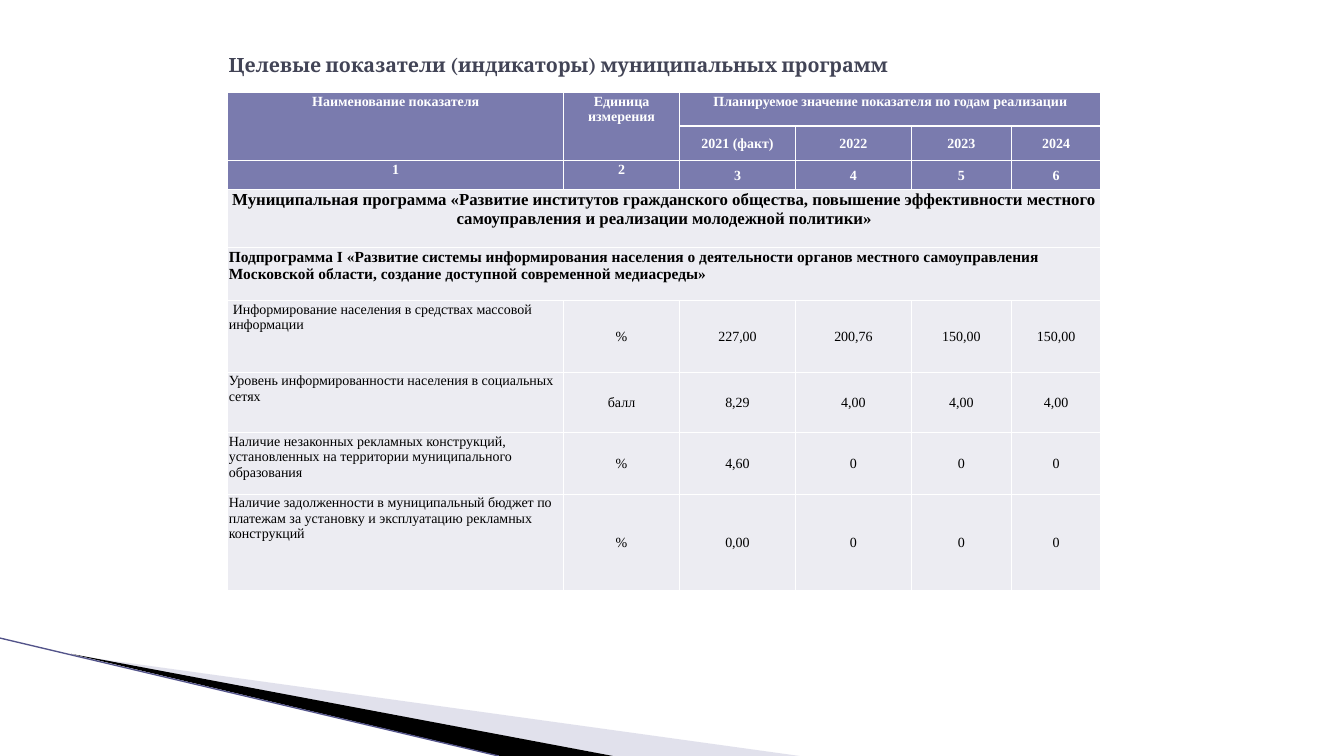
from lxml import etree
from pptx import Presentation
from pptx.dml.color import RGBColor
from pptx.enum.shapes import MSO_CONNECTOR
from pptx.enum.text import MSO_ANCHOR, PP_ALIGN
from pptx.oxml.ns import qn
from pptx.util import Emu, Inches, Pt

LEFT, CENTER = PP_ALIGN.LEFT, PP_ALIGN.CENTER
TOP, MIDDLE = MSO_ANCHOR.TOP, MSO_ANCHOR.MIDDLE
STRAIGHT = MSO_CONNECTOR.STRAIGHT

WIDTH, HEIGHT = Inches(13.33), Inches(7.5)
COLORS = {
    "title": "424456",
    "header": "7A7BAE",
    "body": "ECECF2",
    "white": "FFFFFF",
    "black": "000000",
    "pale_wedge": "B6B6D1",
    "edge": "53548A",
}
TITLE_FONT, TABLE_FONT = "Cambria", "Times New Roman"

COLUMN_WIDTHS = [3.33, 1.15, 1.15, 1.15, 0.99, 0.89]
ROW_HEIGHTS = [0.33, 0.32, 0.29, 0.57, 0.53, 0.71, 0.6, 0.61, 0.96]
HEADER_ROWS = 3
MERGES = [((0, 0), (1, 0)), ((0, 1), (1, 1)), ((0, 2), (0, 5)),
          ((3, 0), (3, 5)), ((4, 0), (4, 5))]

TITLE = "Целевые показатели (индикаторы) муниципальных программ"
HEADINGS = [
    ["Наименование показателя", "Единица измерения",
     "Планируемое значение показателя по годам реализации"],
    ["", "", "2021 (факт)", "2022", "2023", "2024"],
    ["1", "2", "3", "4", "5", "6"],
]
PROGRAM = ("Муниципальная программа «Развитие институтов гражданского общества, "
           "повышение эффективности местного самоуправления и реализации "
           "молодежной политики»")
SUBPROGRAM = ("Подпрограмма I «Развитие системы информирования населения о "
              "деятельности органов местного самоуправления Московской области, "
              "создание доступной современной медиасреды»")
INDICATORS = [
    ["Информирование населения в средствах массовой информации",
     "%", "227,00", "200,76", "150,00", "150,00"],
    ["Уровень информированности населения в социальных сетях",
     "балл", "8,29", "4,00", "4,00", "4,00"],
    ["Наличие незаконных рекламных конструкций, установленных на территории "
     "муниципального образования", "%", "4,60", "0", "0", "0"],
    ["Наличие задолженности в муниципальный бюджет по платежам за установку и "
     "эксплуатацию рекламных конструкций", "%", "0,00", "0", "0", "0"],
]


def rgb(name):
    return RGBColor.from_string(COLORS[name])


def across(share):
    return Emu(round(WIDTH * share / 100))


def down(share):
    return Emu(round(HEIGHT * share / 100))


def add_wedge(slide, corners, color, opacity=None):
    """Draw a filled outline whose corners are percentages of the slide."""
    points = [(across(x), down(y)) for x, y in corners]
    builder = slide.shapes.build_freeform(*points[0], scale=1.0)
    builder.add_line_segments(points[1:], close=True)
    wedge = builder.convert_to_shape()
    wedge.shadow.inherit = False
    wedge.line.fill.background()
    wedge.fill.solid()
    wedge.fill.fore_color.rgb = rgb(color)
    if opacity is not None:
        tint = wedge.fill._xPr.find(".//" + qn("a:srgbClr"))
        etree.SubElement(tint, qn("a:alpha"), val=str(opacity * 1000))


def add_edge(slide, start, end):
    edge = slide.shapes.add_connector(
        STRAIGHT, across(start[0]), down(start[1]), across(end[0]), down(end[1]))
    edge.line.color.rgb = rgb("edge")
    edge.line.width = Pt(0.95)
    etree.SubElement(edge._element.spPr, qn("a:effectLst"))


def write(paragraph, text, font, size, color, bold, align=LEFT):
    paragraph.alignment = align
    run = paragraph.add_run()
    run.text = text
    run.font.name = font
    run.font.size = Pt(size)
    run.font.bold = bold
    run.font.color.rgb = rgb(color)


def add_title(slide):
    box = slide.shapes.add_textbox(across(16.28), down(4), across(67.5), down(9.2))
    frame = box.text_frame
    frame.word_wrap = True
    frame.vertical_anchor = MIDDLE
    write(frame.paragraphs[0], TITLE, TITLE_FONT, 14, "title", True)


def style_cell(cell, color):
    """Set margins, thin white borders and the fill."""
    cell.margin_left = cell.margin_right = cell.margin_top = Inches(0.01)
    cell.margin_bottom = 0
    properties = cell._tc.get_or_add_tcPr()
    for side in ("lnL", "lnR", "lnT", "lnB"):
        border = etree.SubElement(properties, qn("a:" + side), w=str(Pt(1)))
        fill = etree.SubElement(border, qn("a:solidFill"))
        etree.SubElement(fill, qn("a:srgbClr"), val=COLORS["white"])
    cell.fill.solid()
    cell.fill.fore_color.rgb = rgb(color)


def fill_row(table, row, texts, size, color, bold, first_align, middle_from):
    """Write a row; cells from column middle_from on are centred vertically."""
    for column, text in enumerate(texts):
        if not text:
            continue
        cell = table.cell(row, column)
        cell.vertical_anchor = MIDDLE if column >= middle_from else TOP
        write(cell.text_frame.paragraphs[0], text, TABLE_FONT, size, color, bold,
              CENTER if column else first_align)


def add_indicator_table(slide):
    table = slide.shapes.add_table(
        len(ROW_HEIGHTS), len(COLUMN_WIDTHS), across(16.95), down(12.27),
        Inches(sum(COLUMN_WIDTHS)), Inches(sum(ROW_HEIGHTS))).table
    for column, width in zip(table.columns, COLUMN_WIDTHS):
        column.width = Inches(width)
    for index, (row, height) in enumerate(zip(table.rows, ROW_HEIGHTS)):
        row.height = Inches(height)
        for cell in row.cells:
            style_cell(cell, "header" if index < HEADER_ROWS else "body")
    for first, last in MERGES:
        table.cell(*first).merge(table.cell(*last))

    for row, texts in enumerate(HEADINGS):
        fill_row(table, row, texts, 10, "white", True, CENTER, 2 if row else 3)
    fill_row(table, HEADER_ROWS, [PROGRAM], 12, "black", True, CENTER, 1)
    fill_row(table, HEADER_ROWS + 1, [SUBPROGRAM], 11, "black", True, LEFT, 1)
    first_indicator = HEADER_ROWS + 2
    for row, texts in enumerate(INDICATORS, first_indicator):
        fill_row(table, row, texts, 10, "black", False, LEFT, 1)
    opening = table.cell(first_indicator, 0).text_frame.paragraphs[0]
    opening._p.get_or_add_pPr().set("indent", str(Inches(0.04)))


def main():
    deck = Presentation()
    deck.slide_width, deck.slide_height = WIDTH, HEIGHT
    slide = deck.slides.add_slide(deck.slide_layouts[6])
    add_wedge(slide, [(5.5, 86.7), (59.5, 100), (45.6, 100)], "pale_wedge", 40)
    add_wedge(slide, [(5.3, 86.5), (45.6, 100), (37.2, 100)], "black")
    add_edge(slide, (0, 84.4), (37.1, 100))
    add_title(slide)
    add_indicator_table(slide)
    deck.save("out.pptx")


if __name__ == "__main__":
    main()
